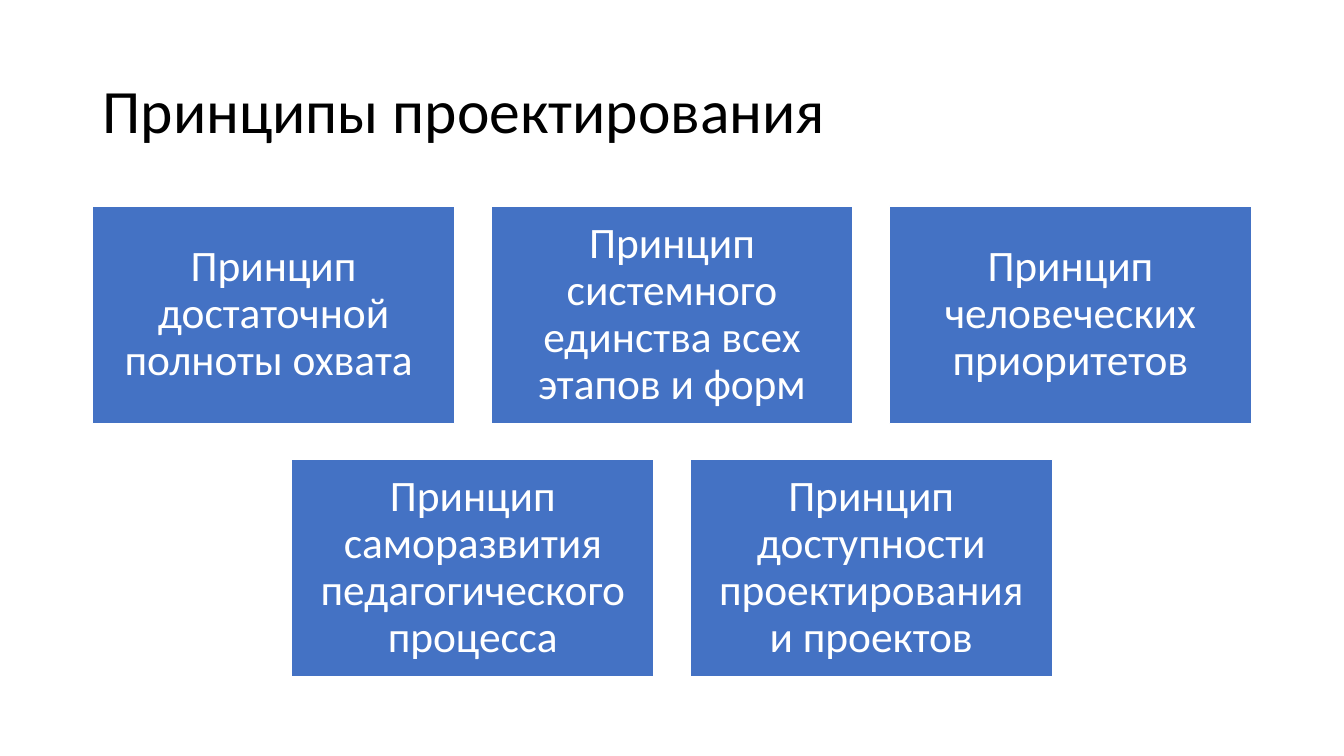
"""Build a slide with five design principles in two centred rows."""
from dataclasses import dataclass

import pptx
import pptx.dml.color
import pptx.enum.shapes
import pptx.enum.text
import pptx.util

Cm = pptx.util.Cm
Pt = pptx.util.Pt
Color = pptx.dml.color.RGBColor
Align = pptx.enum.text.PP_ALIGN
Anchor = pptx.enum.text.MSO_ANCHOR


@dataclass(frozen=True)
class Theme:
    font: str = "Calibri"
    title_size: int = 44
    card_size: int = 31
    ink: str = "000000"
    paper: str = "FFFFFF"
    accent: str = "4472C4"


def apply(target, values):
    for name, value in values.items():
        setattr(target, name, value)


class SlideBuilder:
    def __init__(self, slide, theme):
        self.slide = slide
        self.theme = theme

    def set_text(self, shape, text, size, color, align, margins):
        frame = shape.text_frame
        apply(frame, {"word_wrap": True, "vertical_anchor": Anchor.MIDDLE,
                      "auto_size": pptx.enum.text.MSO_AUTO_SIZE.NONE, **margins})
        para = frame.paragraphs[0]
        apply(para, {"alignment": align, "line_spacing": 0.9})
        span = para.add_run()
        span.text = text
        apply(span.font, {"name": self.theme.font, "size": Pt(size)})
        span.font.color.rgb = Color.from_string(color)

    def title(self, text, left, top, width, height):
        box = self.slide.shapes.title
        apply(box, {"left": Cm(left), "top": Cm(top),
                    "width": Cm(width), "height": Cm(height)})
        self.set_text(box, text, self.theme.title_size, self.theme.ink, Align.LEFT, {})

    def card(self, text, left, top, width, height):
        box = self.slide.shapes.add_shape(
            pptx.enum.shapes.MSO_SHAPE.RECTANGLE,
            Cm(left), Cm(top), Cm(width), Cm(height))
        box.shadow.inherit = False
        box.fill.solid()
        box.fill.fore_color.rgb = Color.from_string(self.theme.accent)
        box.line.color.rgb = Color.from_string(self.theme.paper)
        box.line.width = Pt(1)
        sides = ("left", "top", "right", "bottom")
        margins = {f"margin_{side}": Cm(0.33) for side in sides}
        self.set_text(box, text, self.theme.card_size, self.theme.paper,
                      Align.CENTER, margins)

    def card_rows(self, rows, page_width, top, width, height, gap):
        for row_index, texts in enumerate(rows):
            row_width = len(texts) * (width + gap) - gap
            left = (page_width - row_width) / 2
            for column, text in enumerate(texts):
                self.card(text, left + column * (width + gap),
                          top + row_index * (height + gap), width, height)


PAGE_WIDTH, PAGE_HEIGHT = 33.87, 19.05
PRINCIPLES = [
    ["Принцип достаточной полноты охвата ",
     "Принцип системного единства всех этапов и форм",
     "Принцип человеческих приоритетов"],
    ["Принцип саморазвития педагогического процесса",
     "Принцип доступности проектирования и проектов"],
]


def main():
    deck = pptx.Presentation()
    apply(deck, {"slide_width": Cm(PAGE_WIDTH), "slide_height": Cm(PAGE_HEIGHT)})
    page = SlideBuilder(deck.slides.add_slide(deck.slide_layouts[5]), Theme())
    page.title("Принципы проектирования", left=2.33, top=1.01, width=29.21, height=3.68)
    page.card_rows(PRINCIPLES, PAGE_WIDTH, top=5.19, width=9.13, height=5.48, gap=0.91)
    deck.save("out.pptx")


if __name__ == "__main__":
    main()
